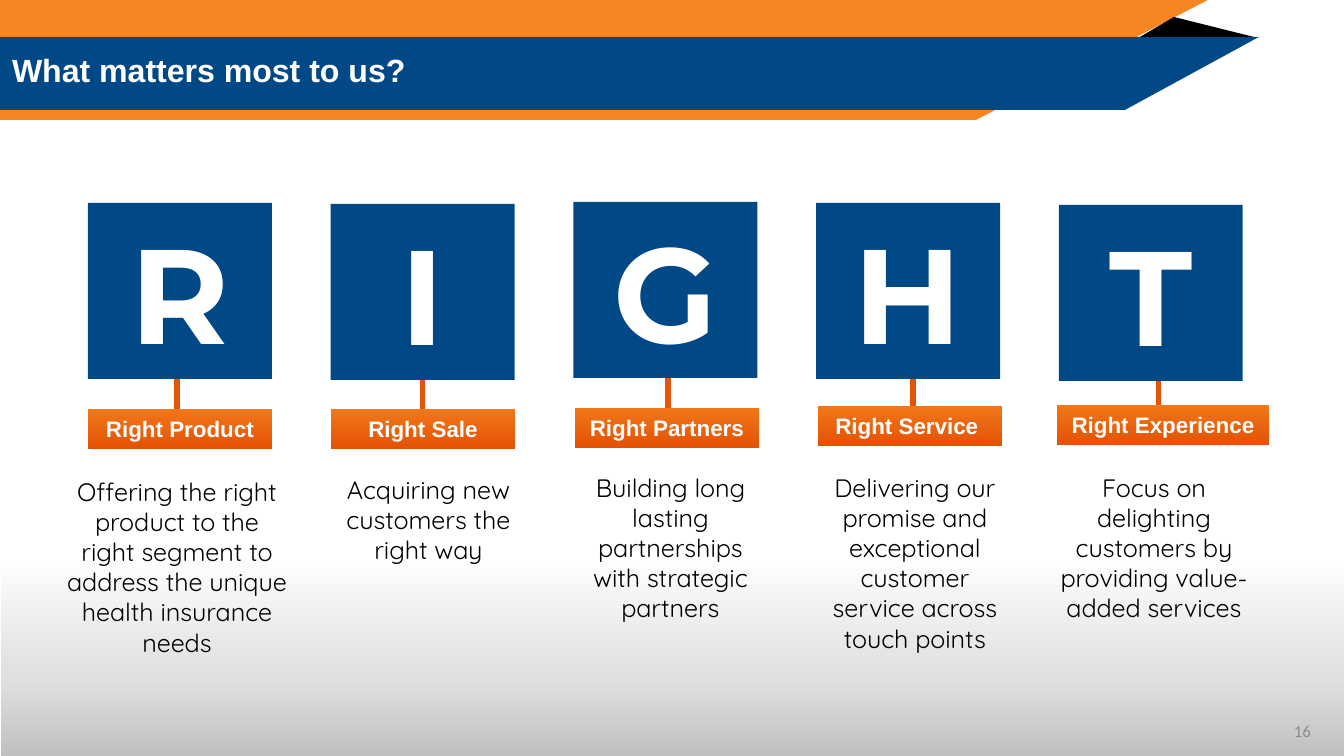
from pptx import Presentation
from pptx.dml.color import RGBColor
from pptx.enum.shapes import MSO_CONNECTOR, MSO_SHAPE
from pptx.enum.text import MSO_ANCHOR, PP_ALIGN
from pptx.oxml.xmlchemy import OxmlElement
from pptx.util import Pt

RECTANGLE = MSO_SHAPE.RECTANGLE
STRAIGHT = MSO_CONNECTOR.STRAIGHT
TOP, MIDDLE = MSO_ANCHOR.TOP, MSO_ANCHOR.MIDDLE
LEFT, CENTER, RIGHT = PP_ALIGN.LEFT, PP_ALIGN.CENTER, PP_ALIGN.RIGHT

EMU_PER_PX = 914400 / 134.4
BLUE, ORANGE, WHITE, BLACK = "004986", "F68621", "FFFFFF", "000000"
CONNECTOR_ORANGE, NUMBER_GRAY = "E45507", "8C8C8C"
LABEL_STOPS = [(0, "F17719"), (100, "E35205")]
FOOTER_STOPS = [(0, "BFBFBF"), (38, "DFDFDF"), (99, "FFFFFF")]

# letter, label, description, then tops of letter, connector, label and
# description, label box (left, width), description box (left, width)
COLUMNS = [
    ("R", "Right Product",
     "Offering the right product to the right segment to address the unique health insurance needs",
     (203, 258, 409, 469), (88, 184), (52, 250)),
    ("I", "Right Sale", "Acquiring new customers the right way",
     (204, 267, 409, 467), (331, 184), (327, 203)),
    ("G", "Right Partners", "Building long lasting partnerships with strategic partners",
     (202, 249, 408, 465), (575, 184), (563, 215)),
    ("H", "Right Service ",
     "Delivering our promise and exceptional customer service across touch points",
     (203, 251, 406, 465), (818, 184), (806, 218)),
    ("T", "Right Experience",
     "Focus on delighting customers by providing value-added services",
     (205, 272, 405, 465), (1057, 212), (1039, 230)),
]


def px(length):
    return round(length * EMU_PER_PX)


def color(hex_string):
    return RGBColor.from_string(hex_string)


def paint(shape, fill):
    shape.shadow.inherit = False
    shape.line.fill.background()
    shape.fill.solid()
    shape.fill.fore_color.rgb = color(fill)


def paint_gradient(shape, stops, angle):
    shape.shadow.inherit = False
    shape.line.fill.background()
    shape.fill.gradient()
    shape.fill.gradient_angle = angle
    stop_list = shape._element.spPr.find(".//{*}gsLst")
    stop_list.clear()
    for position, hex_string in stops:
        stop = OxmlElement("a:gs")
        stop.set("pos", str(position * 1000))
        stop_color = OxmlElement("a:srgbClr")
        stop_color.set("val", hex_string)
        stop.append(stop_color)
        stop_list.append(stop)


def add_rectangle(slide, box):
    return slide.shapes.add_shape(RECTANGLE, *map(px, box))


def write(shape, text, font_name, size, font_color, bold=False,
          alignment=CENTER, anchor=MIDDLE, insets=(13, 7)):
    frame = shape.text_frame
    frame.word_wrap = True
    frame.vertical_anchor = anchor
    frame.margin_left = frame.margin_right = px(insets[0])
    frame.margin_top = frame.margin_bottom = px(insets[1])
    paragraph = frame.paragraphs[0]
    paragraph.text = text
    paragraph.alignment = alignment
    font = paragraph.font
    font.name, font.size, font.bold = font_name, Pt(size), bold
    font.color.rgb = color(font_color)


def add_text(slide, box, *args, **options):
    write(slide.shapes.add_textbox(*map(px, box)), *args, **options)


def add_polygon(slide, points, fill):
    builder = slide.shapes.build_freeform(*points[0], scale=EMU_PER_PX)
    builder.add_line_segments(points[1:], close=True)
    paint(builder.convert_to_shape(), fill)


def add_header(slide, left, top):
    """Layered banner with the title."""
    bands = [
        ([(0, 0), (1208, 0), (976, 120), (0, 120)], ORANGE),
        ([(-4, 37), (1259, 37), (1125, 110), (-4, 110)], BLUE),
        ([(1140, 37), (1174, 17), (1254, 37)], BLACK),
    ]
    for points, fill in bands:
        add_polygon(slide, [(left + x, top + y) for x, y in points], fill)
    add_text(slide, (left - 1, top + 43, 600, 60), "What matters most to us?",
             "Arial", 17.2, WHITE, bold=True, alignment=LEFT, anchor=TOP)


def add_footer(slide, left, top, width, height):
    """Gray fade with the slide number."""
    paint_gradient(add_rectangle(slide, (left, top, width, height)), FOOTER_STOPS, 90)
    add_text(slide, (left + 1033, top + 160, 286, 39), "16", "Calibri", 9,
             NUMBER_GRAY, alignment=RIGHT, insets=(9, 5))


def add_column(slide, left, connector_x, column):
    """Letter tile joined to a label, with a description below."""
    letter, label, description, tops, label_span, text_span = column
    letter_top, connector_top, label_top, text_top = tops

    # Connector, partly behind the tile and the label
    connector = slide.shapes.add_connector(
        STRAIGHT, px(connector_x), px(connector_top),
        px(connector_x), px(connector_top + 165))
    connector.line.color.rgb = color(CONNECTOR_ORANGE)
    connector.line.width = Pt(3)
    connector._element.spPr.append(OxmlElement("a:effectLst"))

    # Tile
    tile = add_rectangle(slide, (left, letter_top, 184, 176))
    paint(tile, BLUE)
    write(tile, letter, "Montserrat", 72, WHITE, bold=True)

    # Label
    label_left, label_width = label_span
    tag = add_rectangle(slide, (label_left, label_top, label_width, 40))
    paint_gradient(tag, LABEL_STOPS, 270)
    write(tag, label, "Arial", 12, WHITE, bold=True)

    # Description
    text_left, text_width = text_span
    add_text(slide, (text_left, text_top, text_width, 196), description,
             "Quicksand", 13.5, BLACK, anchor=TOP)


def main():
    presentation = Presentation()
    presentation.slide_width, presentation.slide_height = px(1344), px(756)
    slide = presentation.slides.add_slide(presentation.slide_layouts[6])
    add_footer(slide, 1, 551, 1344, 208)
    add_header(slide, 0, 0)
    for index, column in enumerate(COLUMNS):
        add_column(slide, 88 + 242.7 * index, 177 + 245.4 * index, column)
    presentation.save("out.pptx")


if __name__ == "__main__":
    main()
